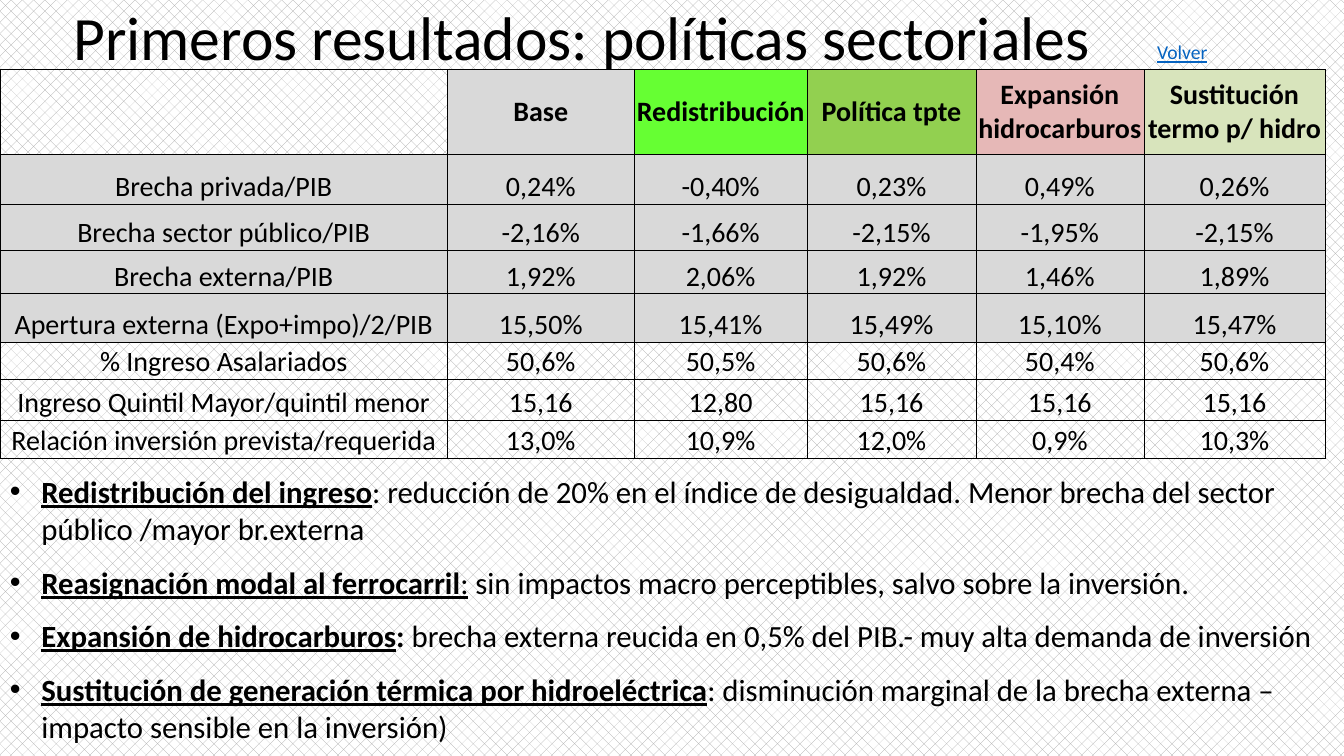
from lxml import etree
from pptx import Presentation
from pptx import util as u
from pptx.dml import color
from pptx.enum import dml, text
from pptx.oxml import ns

Pt = u.Pt
FONT = "Calibri"
GREY = "D9D9D9"
COLUMN_WIDTHS = [319.7, 133.2, 123.8, 120.4, 120, 129.6]
ROW_HEIGHTS = [60.7, 35.4, 33, 31.2, 34.6, 26.6, 29, 27.4]
HEADER_FILLS = [None, GREY, "66FF33", "92D050", "E6B8B7", "D8E4BC"]
GREY_ROWS = range(1, 5)
RESULTS = [
    ["", "Base", "Redistribución", "Política tpte", "Expansión hidrocarburos",
     "Sustitución termo p/ hidro"],
    ["Brecha privada/PIB", "0,24%", "-0,40%", "0,23%", "0,49%", "0,26%"],
    ["Brecha sector público/PIB", "-2,16%", "-1,66%", "-2,15%", "-1,95%", "-2,15%"],
    ["Brecha externa/PIB", "1,92%", "2,06%", "1,92%", "1,46%", "1,89%"],
    ["Apertura externa (Expo+impo)/2/PIB", "15,50%", "15,41%", "15,49%", "15,10%", "15,47%"],
    ["% Ingreso Asalariados", "50,6%", "50,5%", "50,6%", "50,4%", "50,6%"],
    ["Ingreso Quintil Mayor/quintil menor", "15,16", "12,80", "15,16", "15,16", "15,16"],
    ["Relación inversión prevista/requerida", "13,0%", "10,9%", "12,0%", "0,9%", "10,3%"],
]
CONCLUSIONS = [
    [("Redistribución del ingreso", True, True),
     (": reducción de 20% en el índice de desigualdad. Menor brecha del sector "
      "público /mayor br.externa", False, False)],
    [("Reasignación modal al ferrocarril", True, True),
     (":", False, True),
     (" sin impactos macro perceptibles, salvo sobre la inversión.", False, False)],
    [("Expansión de hidrocarburos", True, True),
     (": ", True, False),
     ("brecha externa reucida en 0,5% del PIB.- muy alta demanda de inversión", False, False)],
    [("Sustitución de generación térmica por hidroeléctrica", True, True),
     (": disminución marginal de la brecha externa – impacto sensible en la inversión)",
      False, False)],
]


def rgb(value):
    return color.RGBColor.from_string(value)


def format_run(r, size, fill="000000", bold=False, underline=False):
    r.font.name = FONT
    r.font.size = Pt(size)
    r.font.color.rgb = rgb(fill)
    r.font.bold = bold
    r.font.underline = underline


def set_background(s):
    fill = s.background.fill
    fill.patterned()
    fill.pattern = dml.MSO_PATTERN.PERCENT_25
    fill.fore_color.rgb = rgb("A5A5A5")
    fill.back_color.rgb = rgb("FFFFFF")


def add_box(s, left, top, width, height):
    tf = s.shapes.add_textbox(Pt(left), Pt(top), Pt(width), Pt(height)).text_frame
    tf.word_wrap = True
    return tf


def add_label(s, box, label, size, **style):
    tf = add_box(s, *box)
    tf.text = label
    format_run(tf.paragraphs[0].runs[0], size, **style)
    return tf


def set_borders(cell):
    tc_pr = cell._tc.get_or_add_tcPr()
    for side in ("a:lnL", "a:lnR", "a:lnT", "a:lnB"):
        line = etree.SubElement(tc_pr, ns.qn(side), w=str(Pt(0.5)))
        solid = etree.SubElement(line, ns.qn("a:solidFill"))
        etree.SubElement(solid, ns.qn("a:srgbClr"), val="000000")


def fill_cell(cell, label, fill, is_header):
    cell.margin_left = cell.margin_right = cell.margin_top = cell.margin_bottom = 0
    cell.vertical_anchor = text.MSO_ANCHOR.MIDDLE if is_header else text.MSO_ANCHOR.BOTTOM
    set_borders(cell)
    if fill:
        cell.fill.solid()
        cell.fill.fore_color.rgb = rgb(fill)
    else:
        cell.fill.background()
    p = cell.text_frame.paragraphs[0]
    p.text = label
    p.alignment = text.PP_ALIGN.CENTER
    for r in p.runs:
        format_run(r, 20, bold=is_header)


def add_results_table(s, left, top):
    table = s.shapes.add_table(
        len(RESULTS), len(COLUMN_WIDTHS), Pt(left), Pt(top),
        Pt(sum(COLUMN_WIDTHS)), Pt(sum(ROW_HEIGHTS))).table
    table.first_row = table.horz_banding = False
    for column, width in zip(table.columns, COLUMN_WIDTHS):
        column.width = Pt(width)
    for i, labels in enumerate(RESULTS):
        table.rows[i].height = Pt(ROW_HEIGHTS[i])
        for j, label in enumerate(labels):
            fill = HEADER_FILLS[j] if i == 0 else GREY if i in GREY_ROWS else None
            fill_cell(table.cell(i, j), label, fill, i == 0)


def set_bullet(p, indent):
    p_pr = p._p.get_or_add_pPr()
    p_pr.set("marL", str(Pt(indent)))
    p_pr.set("indent", str(Pt(-indent)))
    etree.SubElement(p_pr, ns.qn("a:buFont"), typeface="Arial")
    etree.SubElement(p_pr, ns.qn("a:buChar"), char="•")


def add_bullets(s, box, items):
    tf = add_box(s, *box)
    for i, parts in enumerate(items):
        p = tf.add_paragraph() if i else tf.paragraphs[0]
        p.space_before = p.space_after = Pt(6)
        set_bullet(p, 22.5)
        for label, bold, underline in parts:
            r = p.add_run()
            r.text = label
            format_run(r, 22, bold=bold, underline=underline)


def main():
    prs = Presentation()
    prs.slide_width, prs.slide_height = Pt(960), Pt(540)
    s = prs.slides.add_slide(prs.slide_layouts[6])
    set_background(s)
    title = add_label(s, (45.4, 0, 864.7, 57.6),
                      "Primeros resultados: políticas sectoriales", 44)
    title.vertical_anchor = text.MSO_ANCHOR.MIDDLE
    title.paragraphs[0].line_spacing = 0.9
    add_label(s, (819.4, 25.2, 70.6, 24.5), "Volver", 14, fill="0563C1", underline=True)
    add_results_table(s, 0, 49.6)
    add_bullets(s, (0, 334, 960, 203.8), CONCLUSIONS)
    prs.save("out.pptx")


if __name__ == "__main__":
    main()
